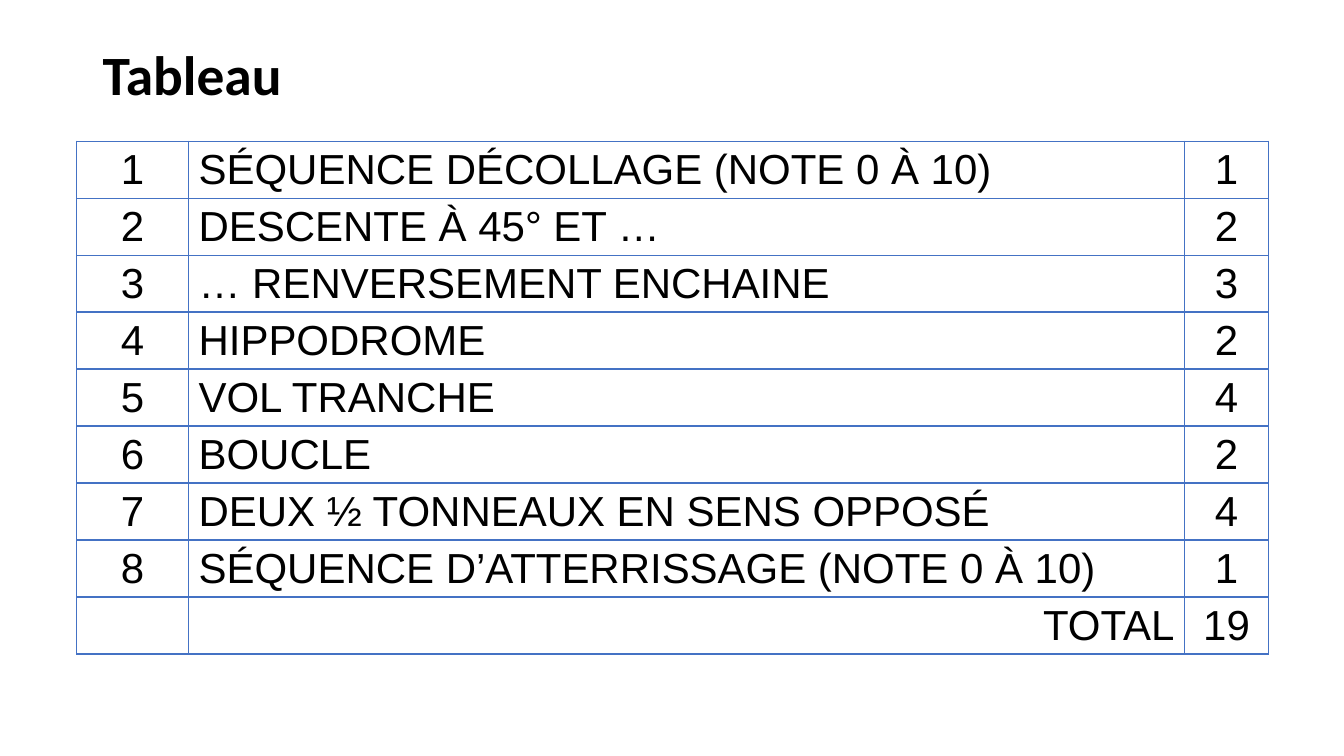
"""Build the slide with the table of flight figures and their coefficients."""
from lxml.etree import SubElement
from pptx import Presentation
from pptx.dml.color import RGBColor
from pptx.enum.text import MSO_ANCHOR, PP_ALIGN
from pptx.oxml.ns import qn
from pptx.util import Inches, Pt

TITLE = "Tableau"
FIGURES = [
    ("SÉQUENCE DÉCOLLAGE (NOTE 0 À 10)", 1),
    ("DESCENTE À 45° ET …", 2),
    ("… RENVERSEMENT ENCHAINE", 3),
    ("HIPPODROME", 2),
    ("VOL TRANCHE", 4),
    ("BOUCLE", 2),
    ("DEUX ½ TONNEAUX EN SENS OPPOSÉ", 4),
    ("SÉQUENCE D’ATTERRISSAGE (NOTE 0 À 10)", 1),
]
COLUMN_WIDTHS = (1.11, 9.88, 0.83)
TABLE_LEFT, TABLE_TOP, TABLE_HEIGHT = 0.76, 1.4, 5.09
THEME = {
    "border": "4472C4",
    "border_width": Pt(1),
    "title": {"name": "Calibri", "size": Pt(39.6), "bold": True},
    "cell": {"name": "Arial", "size": Pt(30), "bold": False},
    "text": RGBColor(0, 0, 0),
    "cell_box": {
        "margin_top": Inches(0.04),
        "margin_bottom": Inches(0.04),
        "vertical_anchor": MSO_ANCHOR.MIDDLE,
    },
}


def apply(target, values):
    for name, value in values.items():
        setattr(target, name, value)


def write(frame, text, style, alignment=PP_ALIGN.LEFT):
    para = frame.paragraphs[0]
    para.alignment = alignment
    span = para.add_run()
    span.text = text
    apply(span.font, THEME[style])
    span.font.color.rgb = THEME["text"]
    return para


def add_borders(cell):
    properties = cell._tc.get_or_add_tcPr()
    for side in ("a:lnL", "a:lnR", "a:lnT", "a:lnB"):
        line = SubElement(properties, qn(side), w=str(THEME["border_width"]))
        fill = SubElement(line, qn("a:solidFill"))
        SubElement(fill, qn("a:srgbClr"), val=THEME["border"])


def add_title(page):
    box = page.shapes.add_textbox(Inches(0.92), Inches(0.4), Inches(11.5), Inches(0.73))
    apply(box.text_frame, {"word_wrap": True, "vertical_anchor": MSO_ANCHOR.MIDDLE})
    write(box.text_frame, TITLE, "title").line_spacing = 0.9


def add_figures(page):
    total = sum(coefficient for _, coefficient in FIGURES)
    rows = [(number, *figure) for number, figure in enumerate(FIGURES, 1)]
    rows.append(("", "TOTAL", total))
    table = page.shapes.add_table(
        len(rows), len(COLUMN_WIDTHS), Inches(TABLE_LEFT), Inches(TABLE_TOP),
        Inches(sum(COLUMN_WIDTHS)), Inches(TABLE_HEIGHT),
    ).table
    apply(table, {"first_row": False, "horz_banding": False})
    for column, width in zip(table.columns, COLUMN_WIDTHS):
        column.width = Inches(width)
    for row_index, values in enumerate(rows):
        label_side = PP_ALIGN.RIGHT if values[1] == "TOTAL" else PP_ALIGN.LEFT
        alignments = (PP_ALIGN.CENTER, label_side, PP_ALIGN.CENTER)
        for column_index, (value, alignment) in enumerate(zip(values, alignments)):
            cell = table.cell(row_index, column_index)
            apply(cell, THEME["cell_box"])
            add_borders(cell)
            cell.fill.background()
            if value != "":
                write(cell.text_frame, str(value), "cell", alignment)


def main():
    deck = Presentation()
    apply(deck, {"slide_width": Inches(13.33), "slide_height": Inches(7.5)})
    page = deck.slides.add_slide(deck.slide_layouts[6])
    add_figures(page)
    add_title(page)
    deck.save("out.pptx")


if __name__ == "__main__":
    main()
